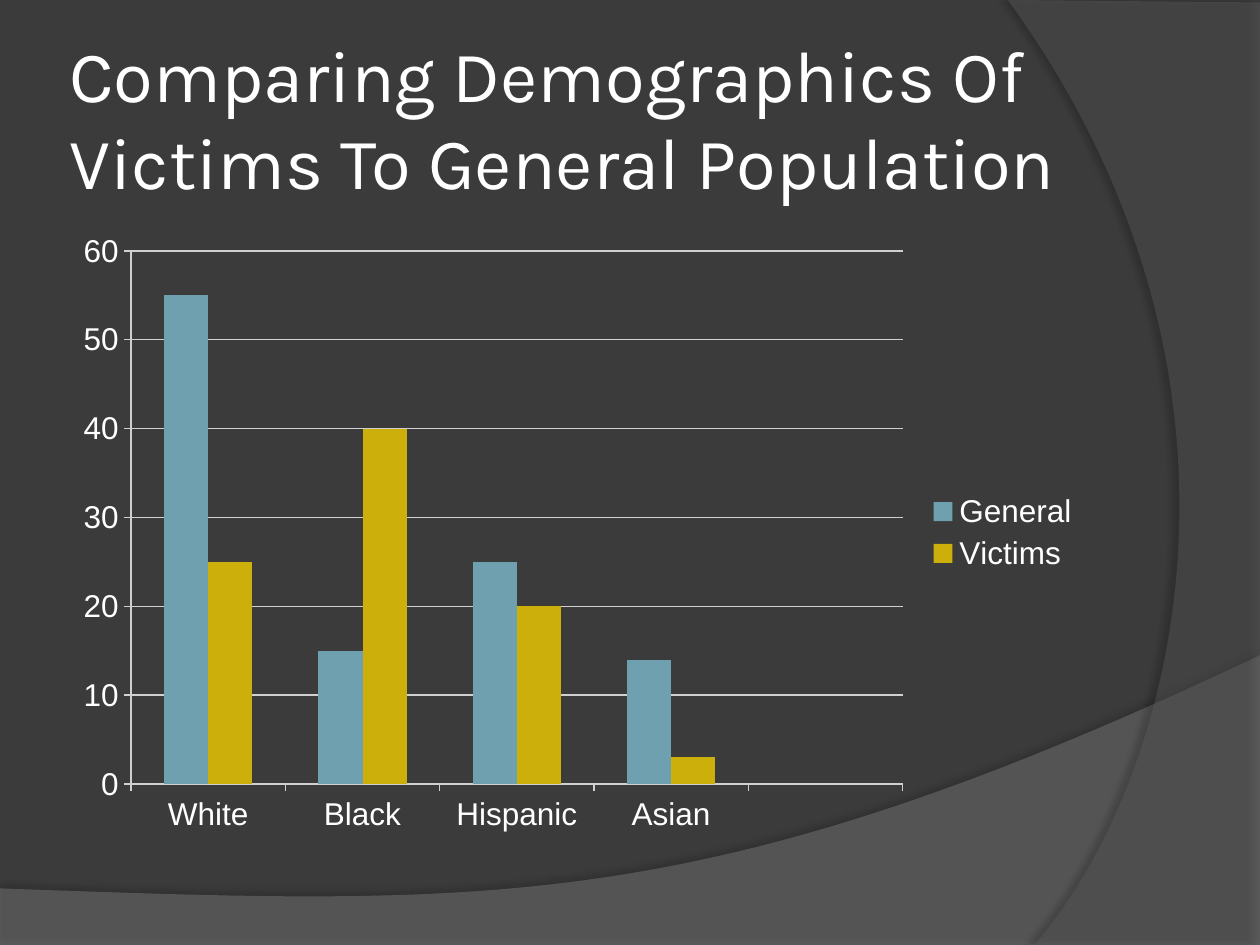
from lxml import etree
from pptx import Presentation
from pptx.chart.data import CategoryChartData
from pptx.dml.color import RGBColor
from pptx.enum.chart import XL_CHART_TYPE, XL_LEGEND_POSITION, XL_TICK_MARK
from pptx.enum.text import MSO_ANCHOR
from pptx.oxml.ns import qn
from pptx.util import Cm, Pt

COLUMNS = XL_CHART_TYPE.COLUMN_CLUSTERED
LEGEND_RIGHT = XL_LEGEND_POSITION.RIGHT
TICK_OUT = XL_TICK_MARK.OUTSIDE
TICK_NONE = XL_TICK_MARK.NONE
MIDDLE = MSO_ANCHOR.MIDDLE

CHARCOAL = RGBColor(0x3B, 0x3B, 0x3B)
WAVE_GREY = RGBColor(0x7F, 0x7F, 0x7F)
ARC_GREY = RGBColor(0x5E, 0x5E, 0x5E)
WHITE = RGBColor(0xFF, 0xFF, 0xFF)
LINE_GREY = RGBColor(0xD0, 0xD0, 0xD0)
TEAL = RGBColor(0x6E, 0xA0, 0xB0)
GOLD = RGBColor(0xCC, 0xAF, 0x0A)


def write_text(frame, text, *, font, size, color):
    run = frame.paragraphs[0].add_run()
    run.text = text
    run.font.name = font
    run.font.size = Pt(size)
    run.font.color.rgb = color


def bezier(start, control1, control2, end, steps=60):
    """Points along a cubic curve, start included."""
    points = []
    for i in range(steps + 1):
        t = i / steps
        weights = ((1 - t) ** 3, 3 * t * (1 - t) ** 2, 3 * t * t * (1 - t), t ** 3)
        corners = (start, control1, control2, end)
        points.append(tuple(sum(w * c[axis] for w, c in zip(weights, corners))
                            for axis in (0, 1)))
    return points


def add_alpha(color_element, percent):
    etree.SubElement(color_element, qn("a:alpha"), val=str(percent * 1000))


class SlideBuilder:
    title_font = "Karla"
    chart_font = "Arial"

    def __init__(self, slide):
        self.slide = slide

    def background(self, color):
        fill = self.slide.background.fill
        fill.solid()
        fill.fore_color.rgb = color

    def swoosh(self, points, color, *, opacity, shadow_opacity, distance, direction):
        outline = [(Cm(x), Cm(y)) for x, y in points]
        builder = self.slide.shapes.build_freeform(*outline[0])
        builder.add_line_segments(outline[1:], close=True)
        shape = builder.convert_to_shape()
        shape.fill.solid()
        shape.fill.fore_color.rgb = color
        shape.line.fill.background()
        shape.shadow.inherit = False
        properties = shape._element.spPr
        add_alpha(properties.find(qn("a:solidFill"))[0], opacity)
        shadow = etree.SubElement(
            properties.find(qn("a:effectLst")), qn("a:outerShdw"),
            blurRad=str(Pt(4)), dist=str(Pt(distance)),
            dir=str(direction * 60000), algn="ctr", rotWithShape="0")
        add_alpha(etree.SubElement(shadow, qn("a:srgbClr"), val="000000"),
                  shadow_opacity)

    def title(self, text, left, top, width, height):
        frame = self.slide.shapes.add_textbox(
            Cm(left), Cm(top), Cm(width), Cm(height)).text_frame
        frame.word_wrap = True
        frame.vertical_anchor = MIDDLE
        frame.margin_left = frame.margin_right = Cm(0.13)
        frame.margin_top = frame.margin_bottom = Cm(0.13)
        write_text(frame, text, font=self.title_font, size=41.4, color=WHITE)

    def column_chart(self, categories, series, left, top, width, height):
        data = CategoryChartData()
        data.categories = categories
        for name, values, _ in series:
            data.add_series(name, values)
        chart = self.slide.shapes.add_chart(
            COLUMNS, Cm(left), Cm(top), Cm(width), Cm(height), data).chart
        chart.has_title = False
        chart.font.name = self.chart_font
        chart.font.size = Pt(18)
        chart.font.color.rgb = WHITE
        chart.has_legend = True
        chart.legend.position = LEGEND_RIGHT
        chart.legend.include_in_layout = False

        plot = chart.plots[0]
        plot.gap_width = 150
        plot.overlap = 0
        plot.vary_by_categories = False
        for bars, (_, _, color) in zip(plot.series, series):
            bars.format.fill.solid()
            bars.format.fill.fore_color.rgb = color
            bars.invert_if_negative = False

        chart.value_axis.has_major_gridlines = True
        for axis in (chart.category_axis, chart.value_axis):
            axis.major_tick_mark = TICK_OUT
            axis.minor_tick_mark = TICK_NONE
            axis.format.line.color.rgb = LINE_GREY
        chart.value_axis.major_gridlines.format.line.color.rgb = LINE_GREY


def main():
    deck = Presentation()
    deck.slide_width, deck.slide_height = Cm(25.4), Cm(19.05)
    page = SlideBuilder(deck.slides.add_slide(deck.slide_layouts[6]))

    # Backdrop: bottom wave and right-hand arc
    page.background(CHARCOAL)
    wave = [(0, 19.08), (25.4, 19.08)] + bezier(
        (25.4, 13.21), (14.2, 18.52), (9.93, 18.26), (0, 17.91))
    page.swoosh(wave, WAVE_GREY, opacity=45, shadow_opacity=35,
                distance=3.5, direction=270)
    arc = [(25.4, 0.05), (25.4, 19.05)] + bezier(
        (20.85, 19.05), (23.75, 15.72), (25.86, 7.62), (20.32, 0))
    page.swoosh(arc, ARC_GREY, opacity=40, shadow_opacity=45,
                distance=4, direction=180)

    # Title
    page.title("Comparing Demographics Of Victims To General Population",
               1.27, 0.76, 20.75, 3.18)

    # Population shares; the last category is empty
    page.column_chart(
        ["White", "Black", "Hispanic", "Asian", ""],
        [("General", (55, 15, 25, 14, None), TEAL),
         ("Victims", (25, 40, 20, 3, None), GOLD)],
        1.27, 4.45, 20.75, 12.57)

    deck.save("out.pptx")


if __name__ == "__main__":
    main()
